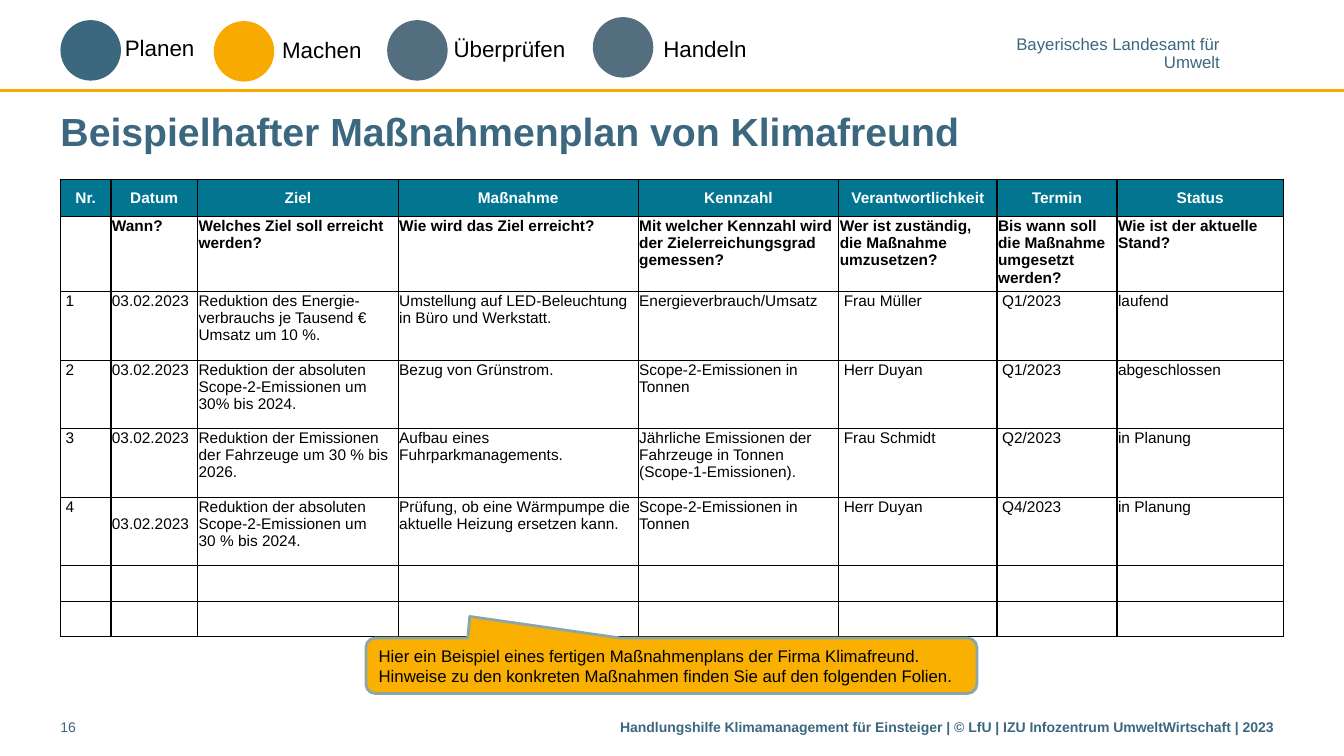
"""Builds the slide with the sample climate action plan."""
from dataclasses import dataclass

import pptx
import pptx.dml.color
import pptx.enum.shapes
import pptx.enum.text
import pptx.util
from lxml import etree

RGB = pptx.dml.color.RGBColor
ALIGN = pptx.enum.text.PP_ALIGN
ANCHOR = pptx.enum.text.MSO_ANCHOR
SHAPE = pptx.enum.shapes.MSO_SHAPE

BLUE = RGB(0x3B, 0x68, 0x7F)
SLATE = RGB(0x52, 0x6E, 0x7F)
ORANGE = RGB(0xF9, 0xAA, 0x00)
AMBER = RGB(0xF9, 0xB0, 0x00)
SAGE = RGB(0x8A, 0xA6, 0xA8)
TEAL = RGB(0x02, 0x75, 0x91)
BLACK = RGB(0, 0, 0)
WHITE = RGB(0xFF, 0xFF, 0xFF)

FONT = "Arial"
GRID_COLUMNS, GRID_ROWS = 1333, 750
UNIT = pptx.util.Inches(0.01)
CIRCLE = 60
LABEL_HEIGHT = 37
NO_SIDES = (0, 5, 0, 5)
DEFAULT_INSETS = (10, 5, 10, 5)


@dataclass(frozen=True)
class Box:
    left: int
    top: int
    width: int
    height: int

    def emu(self) -> tuple[int, int, int, int]:
        return (self.left * UNIT, self.top * UNIT, self.width * UNIT, self.height * UNIT)


@dataclass(frozen=True)
class Phase:
    name: str
    color: RGB
    circle_left: int
    circle_top: int
    label_left: int
    label_top: int
    label_width: int


@dataclass(frozen=True)
class Label:
    lines: tuple[str, ...]
    box: Box
    size: int
    color: RGB = BLUE
    bold: bool = False
    insets: tuple[int, int, int, int] = NO_SIDES
    align: ALIGN = ALIGN.LEFT
    anchor: ANCHOR = ANCHOR.TOP
    wrap: bool = True
    spacing: float = 1.0


@dataclass(frozen=True)
class Column:
    title: str
    width: int
    question: str
    indent: int = 1


PHASES = (
    Phase("Planen", BLUE, 60, 20, 114, 29, 167),
    Phase("Machen", ORANGE, 212, 21, 270, 31, 103),
    Phase("Überprüfen", SLATE, 384, 20, 440, 30, 137),
    Phase("Handeln", SLATE, 588, 17, 648, 30, 295),
)
LABELS = (
    Label(("Bayerisches Landesamt für", "Umwelt"), Box(1007, 37, 203, 34), 12,
          insets=(0, 0, 0, 0), align=ALIGN.RIGHT, wrap=False, spacing=0.85),
    Label(("Beispielhafter Maßnahmenplan von Klimafreund",), Box(60, 102, 1231, 55), 28,
          bold=True, anchor=ANCHOR.MIDDLE),
    Label(("16",), Box(60, 708, 30, 31), 10),
    Label(("Handlungshilfe Klimamanagement für Einsteiger | © LfU | "
           "IZU Infozentrum UmweltWirtschaft | 2023",), Box(615, 708, 676, 31), 10, bold=True),
)
COLUMNS = (
    Column("Nr.", 50, "", 5),
    Column("Datum", 86, "Wann?"),
    Column("Ziel", 199, "Welches Ziel soll erreicht werden?"),
    Column("Maßnahme", 238, "Wie wird das Ziel erreicht?"),
    Column("Kennzahl", 199, "Mit welcher Kennzahl wird der Zielerreichungsgrad gemessen?"),
    Column("Verantwortlichkeit", 157, "Wer ist zuständig, die Maßnahme umzusetzen?", 5),
    Column("Termin", 119, "Bis wann soll die Maßnahme umgesetzt werden?", 5),
    Column("Status", 165, "Wie ist der aktuelle Stand?"),
)
MEASURES = (
    ("1", "03.02.2023", "Reduktion des Energie-\nverbrauchs je Tausend € Umsatz um 10 %.",
     "Umstellung auf LED-Beleuchtung in Büro und Werkstatt.", "Energieverbrauch/Umsatz",
     "Frau Müller", "Q1/2023", "laufend"),
    ("2", "03.02.2023", "Reduktion der absoluten Scope-2-Emissionen um 30% bis 2024.",
     "Bezug von Grünstrom.", "Scope-2-Emissionen in Tonnen",
     "Herr Duyan", "Q1/2023", "abgeschlossen"),
    ("3", "03.02.2023", "Reduktion der Emissionen der Fahrzeuge um 30 % bis 2026.",
     "Aufbau eines Fuhrparkmanagements.",
     "Jährliche Emissionen der Fahrzeuge in Tonnen (Scope-1-Emissionen).",
     "Frau Schmidt", "Q2/2023", "in Planung"),
    ("4", "03.02.2023", "Reduktion der absoluten Scope-2-Emissionen um\n30 % bis 2024.",
     "Prüfung, ob eine Wärmpumpe die aktuelle Heizung ersetzen kann.",
     "Scope-2-Emissionen in Tonnen", "Herr Duyan", "Q4/2023", "in Planung"),
)
HEADER_ROW, QUESTION_ROW = 0, 1
LOWERED_DATE = (5, 1)
ROW_HEIGHTS = (37,) + (68,) * 5 + (35,) * 2
CALLOUT = Label(
    ("Hier ein Beispiel eines fertigen Maßnahmenplans der Firma Klimafreund. "
     "Hinweise zu den konkreten Maßnahmen finden Sie auf den folgenden Folien.",),
    Box(363, 633, 606, 55), 12, BLACK, insets=DEFAULT_INSETS, anchor=ANCHOR.MIDDLE)


def style_paragraph(p, size: int, color: RGB, bold: bool, align: ALIGN) -> None:
    p.alignment = align
    p.font.size = pptx.util.Pt(size)
    for r in p.runs:
        r.font.name = FONT
        r.font.size = pptx.util.Pt(size)
        r.font.bold = bold
        r.font.color.rgb = color


def set_insets(target, insets: tuple[int, int, int, int]) -> None:
    (target.margin_left, target.margin_top,
     target.margin_right, target.margin_bottom) = [n * UNIT for n in insets]


def write_label(tf, label: Label) -> None:
    tf.word_wrap = label.wrap
    tf.vertical_anchor = label.anchor
    set_insets(tf, label.insets)
    tf.text = "\n".join(label.lines)
    for p in tf.paragraphs:
        p.line_spacing = label.spacing
        style_paragraph(p, label.size, label.color, label.bold, label.align)


def add_label(s, label: Label) -> None:
    write_label(s.shapes.add_textbox(*label.box.emu()).text_frame, label)


def add_phase(s, phase: Phase) -> None:
    circle = Box(phase.circle_left, phase.circle_top, CIRCLE, CIRCLE)
    sp = s.shapes.add_shape(SHAPE.OVAL, *circle.emu())
    sp.shadow.inherit = False
    sp.fill.solid()
    sp.fill.fore_color.rgb = phase.color
    sp.line.fill.background()
    box = Box(phase.label_left, phase.label_top, phase.label_width, LABEL_HEIGHT)
    add_label(s, Label((phase.name,), box, 16, BLACK, insets=DEFAULT_INSETS))


def add_rule(s) -> None:
    y = 90 * UNIT
    line = s.shapes.add_connector(
        pptx.enum.shapes.MSO_CONNECTOR.STRAIGHT, 0, y, GRID_COLUMNS * UNIT, y)
    line.line.color.rgb = ORANGE
    line.line.width = pptx.util.Pt(2)
    etree.SubElement(line._element.spPr, pptx.oxml.ns.qn("a:effectLst"))


def add_borders(cell) -> None:
    qn = pptx.oxml.ns.qn
    tc_pr = cell._tc.get_or_add_tcPr()
    for side in ("a:lnL", "a:lnR", "a:lnT", "a:lnB"):
        ln = etree.SubElement(tc_pr, qn(side), w=str(pptx.util.Pt(1)))
        fill = etree.SubElement(ln, qn("a:solidFill"))
        etree.SubElement(fill, qn("a:srgbClr"), val=str(BLACK))


def add_plan(s) -> None:
    box = Box(60, 178, sum(c.width for c in COLUMNS), sum(ROW_HEIGHTS))
    table = s.shapes.add_table(len(ROW_HEIGHTS), len(COLUMNS), *box.emu()).table
    table.first_row = table.horz_banding = False
    for row, height in zip(table.rows, ROW_HEIGHTS):
        row.height = height * UNIT
    rows = [[c.title for c in COLUMNS], [c.question for c in COLUMNS], *MEASURES]
    rows += [[""] * len(COLUMNS)] * (len(ROW_HEIGHTS) - len(rows))
    for j, column in enumerate(COLUMNS):
        table.columns[j].width = column.width * UNIT
        for i, texts in enumerate(rows):
            cell = table.cell(i, j)
            header = i == HEADER_ROW
            indent = column.indent if i > QUESTION_ROW else 1
            set_insets(cell, (indent, 18 if (i, j) == LOWERED_DATE else 1, 1, 0))
            cell.vertical_anchor = ANCHOR.MIDDLE if header else ANCHOR.TOP
            add_borders(cell)
            if header:
                cell.fill.solid()
                cell.fill.fore_color.rgb = TEAL
            else:
                cell.fill.background()
            p = cell.text_frame.paragraphs[0]
            p.text = texts[j]
            style_paragraph(p, 11, WHITE if header else BLACK, i <= QUESTION_ROW,
                            ALIGN.CENTER if header else ALIGN.LEFT)


def add_callout(s) -> None:
    sp = s.shapes.add_shape(SHAPE.ROUNDED_RECTANGULAR_CALLOUT, *CALLOUT.box.emu())
    sp.adjustments[0], sp.adjustments[1], sp.adjustments[2] = -0.33, -0.89, 0.17
    sp.shadow.inherit = False
    sp.fill.solid()
    sp.fill.fore_color.rgb = AMBER
    sp.line.color.rgb = SAGE
    sp.line.width = pptx.util.Pt(2)
    write_label(sp.text_frame, CALLOUT)


def main() -> None:
    prs = pptx.Presentation()
    prs.slide_width, prs.slide_height = GRID_COLUMNS * UNIT, GRID_ROWS * UNIT
    s = prs.slides.add_slide(prs.slide_layouts[6])
    add_rule(s)
    for phase in PHASES:
        add_phase(s, phase)
    for label in LABELS:
        add_label(s, label)
    add_plan(s)
    add_callout(s)
    prs.save("out.pptx")


if __name__ == "__main__":
    main()
